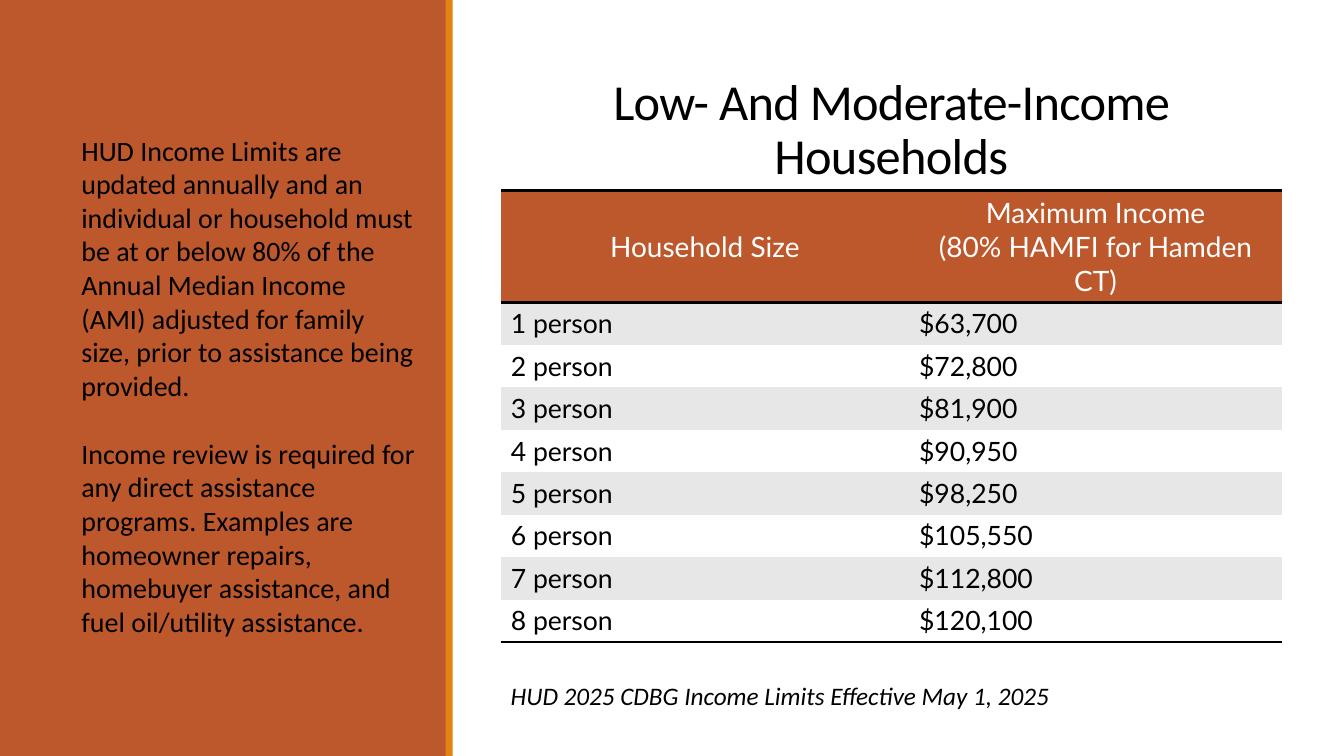
from dataclasses import dataclass

from lxml import etree
from pptx import Presentation
from pptx.dml.color import RGBColor
from pptx.enum.shapes import MSO_SHAPE
from pptx.enum.text import MSO_ANCHOR, MSO_AUTO_SIZE, PP_ALIGN
from pptx.oxml.ns import qn
from pptx.util import Cm, Pt

RECTANGLE = MSO_SHAPE.RECTANGLE
TOP, MIDDLE, BOTTOM = MSO_ANCHOR.TOP, MSO_ANCHOR.MIDDLE, MSO_ANCHOR.BOTTOM
LEFT, CENTER = PP_ALIGN.LEFT, PP_ALIGN.CENTER
NO_AUTOSIZE = MSO_AUTO_SIZE.NONE
TITLE_ONLY = 5
PLAIN_TABLE_STYLE = "{2D5ABB26-0587-4C30-8999-92F81FD0307C}"


@dataclass(frozen=True)
class Theme:
    rust: str = "BD582C"
    orange: str = "E48312"
    black: str = "000000"
    white: str = "FFFFFF"
    band: str = "E7E7E7"
    text_font: str = "Calibri"
    table_font: str = "Lato"
    title_size: int = 36
    body_size: int = 20
    cell_size: int = 19
    note_size: int = 18


THEME = Theme()

TITLE = "Low- And Moderate-Income Households"
EXPLANATION = [
    "HUD Income Limits are updated annually and an individual or household "
    "must be at or below 80% of the Annual Median Income (AMI) adjusted for "
    "family size, prior to assistance being provided.",
    "Income review is required for any direct assistance programs. Examples "
    "are homeowner repairs, homebuyer assistance, and fuel oil/utility "
    "assistance.",
]
NOTE = "HUD 2025 CDBG Income Limits Effective May 1, 2025"
HEADER = [["Household Size"], ["Maximum Income", "(80% HAMFI for Hamden CT)"]]
INCOME_LIMITS = ["$63,700", "$72,800", "$81,900", "$90,950",
                 "$98,250", "$105,550", "$112,800", "$120,100"]


def color(value):
    return RGBColor.from_string(value)


def set_all(target, values):
    for name, value in values.items():
        setattr(target, name, value)


def write(frame, texts, font, ink=THEME.black, layout=None):
    """Fill a text frame with one paragraph per text."""
    for index, text in enumerate(texts):
        para = frame.paragraphs[0] if index == 0 else frame.add_paragraph()
        set_all(para, layout or {})
        span = para.add_run()
        span.text = text
        set_all(span.font, font)
        span.font.color.rgb = color(ink)


def add_bar(page, left, width, height, fill):
    bar = page.shapes.add_shape(RECTANGLE, left, 0, width, height)
    bar.shadow.inherit = False
    bar.fill.solid()
    bar.fill.fore_color.rgb = color(fill)
    bar.line.fill.background()


def set_title(page, text):
    title = page.shapes.title
    set_all(title, {"left": Cm(13.34), "top": Cm(1.75),
                    "width": Cm(18.24), "height": Cm(3.05)})
    frame = title.text_frame
    set_all(frame, {"auto_size": NO_AUTOSIZE, "word_wrap": True,
                    "vertical_anchor": BOTTOM})
    write(frame, [text],
          {"name": THEME.text_font, "size": Pt(THEME.title_size)},
          layout={"alignment": CENTER, "line_spacing": 0.9})
    span = frame.paragraphs[0].runs[0]
    span._r.get_or_add_rPr().set("spc", "-50")


def add_text(page, area, texts, size, italic=False):
    box = page.shapes.add_textbox(*area)
    frame = box.text_frame
    frame.word_wrap = True
    write(frame, texts, {"name": THEME.text_font, "size": Pt(size),
                         "italic": italic})
    for para in frame.paragraphs[1:]:
        para.space_before = Pt(size * 1.22)


def add_border(cell, side):
    line = etree.SubElement(cell._tc.get_or_add_tcPr(), qn(f"a:ln{side}"),
                            w=str(Pt(2)))
    fill = etree.SubElement(line, qn("a:solidFill"))
    etree.SubElement(fill, qn("a:srgbClr"), val=THEME.black)


def style_cell(cell, fill, anchor, borders):
    """Borders go in first because the schema puts them before the fill."""
    for side in borders:
        add_border(cell, side)
    cell.fill.solid()
    cell.fill.fore_color.rgb = color(fill)
    cell.vertical_anchor = anchor


def add_income_table(page):
    rows = [HEADER] + [[[f"{size} person"], [limit]]
                       for size, limit in enumerate(INCOME_LIMITS, start=1)]
    widths = [Cm(10.29), Cm(9.4)]
    heights = [Cm(2.82)] + [Cm(1.07)] * len(INCOME_LIMITS)
    table = page.shapes.add_table(len(rows), len(widths), Cm(12.62), Cm(4.8),
                                  sum(widths), sum(heights)).table
    set_all(table, {"first_row": False, "horz_banding": False})
    table._tbl.tblPr.find(qn("a:tableStyleId")).text = PLAIN_TABLE_STYLE
    for column, width in zip(table.columns, widths):
        column.width = width
    for index, (row, texts) in enumerate(zip(table.rows, rows)):
        row.height = heights[index]
        if index == 0:
            fill, ink, size = THEME.rust, THEME.white, THEME.body_size
            anchor, align, borders = MIDDLE, CENTER, "TB"
        else:
            fill = THEME.band if index % 2 else THEME.white
            ink, size = THEME.black, THEME.cell_size
            anchor, align = TOP, LEFT
            borders = "B" if index == len(rows) - 1 else ""
        for cell, lines in zip(row.cells, texts):
            style_cell(cell, fill, anchor, borders)
            write(cell.text_frame, lines,
                  {"name": THEME.table_font, "size": Pt(size)},
                  ink, {"alignment": align})


def main():
    deck = Presentation()
    set_all(deck, {"slide_width": Cm(33.87), "slide_height": Cm(19.05)})
    page = deck.slides.add_slide(deck.slide_layouts[TITLE_ONLY])
    add_bar(page, 0, Cm(11.25), deck.slide_height, THEME.rust)
    add_bar(page, Cm(11.23), Cm(0.18), deck.slide_height, THEME.orange)
    set_title(page, TITLE)
    add_income_table(page)
    add_text(page, (Cm(12.62), Cm(17.02), Cm(19.69), Cm(1.02)), [NOTE],
             THEME.note_size, italic=True)
    add_text(page, (Cm(1.8), Cm(3.23), Cm(8.94), Cm(13.08)), EXPLANATION,
             THEME.body_size)
    deck.save("out.pptx")


if __name__ == "__main__":
    main()
